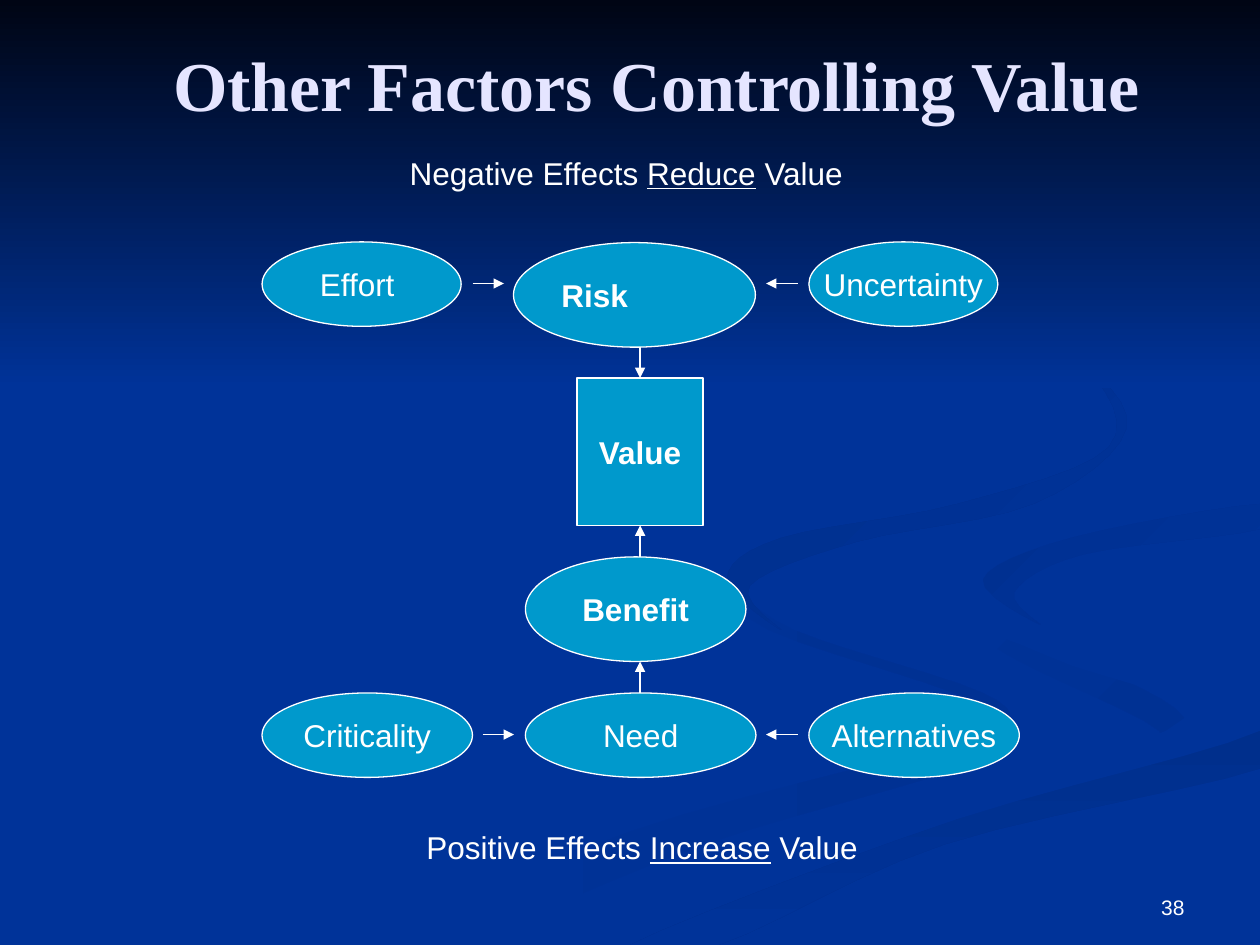
import pptx
import pptx.dml.color
import pptx.enum.shapes
import pptx.enum.text
import pptx.oxml
import pptx.util

Inches = pptx.util.Inches
Pt = pptx.util.Pt
MSO_SHAPE = pptx.enum.shapes.MSO_SHAPE
ALIGN = pptx.enum.text.PP_ALIGN
ANCHOR = pptx.enum.text.MSO_ANCHOR

COLORS = {
    "blue": "003399",
    "night": "000514",
    "ribbon": "003193",
    "ribbon_dark": "002F8C",
    "ribbon_mid": "003091",
    "node": "0099CC",
    "white": "FFFFFF",
    "title": "E5E5FF",
}

RIBBONS = [
    (("blue", "ribbon", 0), [
        (7.8, 5.5), (6.3, 5), (5.75, 4.6), (6.1, 5), (7.8, 5.6), (7.5, 5.9),
        (5, 6.6), (3, 7.5), (3.6, 7.5), (5.6, 6.7), (7.6, 6.1), (8, 5.8)]),
    (("blue", "ribbon", 45), [
        (9.4, 5.7), (8.5, 5.2), (7.24, 4.64), (8, 5.2), (9.2, 5.8), (8.94, 6.05)]),
    (("ribbon_dark", "blue", 90), [
        (5, 7.5), (5.7, 7.5), (7.5, 6.7), (10, 6.1), (10, 5.8), (7.6, 6.5)]),
    (("blue", "blue", 0), [
        (7.25, 4.6), (8.3, 5.2), (9.4, 5.7), (7.4, 6.4), (4.8, 7.5), (7.6, 6.5),
        (10, 5.8), (10, 5.4), (7.8, 4.6), (10, 4), (10, 3.9)]),
    (("ribbon_mid", "blue", 45), [
        (7.8, 4.6), (8.26, 4.96), (8.05, 4.7), (8.6, 4.4), (10, 4.2), (10, 4),
        (8.5, 4.27)]),
    (("ribbon_dark", "blue", 45), [
        (6.8, 4.3), (8.2, 4), (8.94, 3.4), (8.5, 2.8), (7.62, 2.33), (8.6, 2.9),
        (8.8, 3.55), (7.6, 4), (6.2, 4.27), (5.77, 4.6), (6.2, 5), (5.95, 4.65)]),
]


def rgb(name):
    """Return the named palette colour."""
    return pptx.dml.color.RGBColor.from_string(COLORS[name])


def smooth_outline(corners, steps=6):
    """Return a closed smooth curve through the corners."""
    def blend(before, start, end, after, t):
        return start + t / 2 * (
            end - before
            + t * (2 * before - 5 * start + 4 * end - after)
            + t * t * (3 * (start - end) + after - before))

    count = len(corners)
    curve = []
    for index in range(count):
        near = [corners[(index + shift) % count] for shift in (-1, 0, 1, 2)]
        for step in range(steps):
            curve.append([blend(*axis, step / steps) for axis in zip(*near)])
    return curve


def style_run(run, size, color="white", font="Arial", bold=False, underline=False):
    """Format one run of text."""
    run.font.name, run.font.size = font, Pt(size)
    run.font.bold, run.font.underline = bold, underline
    run.font.color.rgb = rgb(color)


def paint_backdrop(part, start, end, angle):
    """Give a backdrop part its gradient, with no outline or shadow."""
    part.shadow.inherit = False
    part.line.fill.background()
    part.fill.gradient()
    part.fill.gradient_angle = (360 - angle) % 360
    for stop, color in zip(part.fill.gradient_stops, (start, end)):
        stop.color.rgb = rgb(color)


def add_backdrop(slide, left, top, width, height, night_height):
    """Draw the ribbons and the night sky over the blue background."""
    slide.background.fill.solid()
    slide.background.fill.fore_color.rgb = rgb("blue")
    for gradient, corners in RIBBONS:
        points = [(left + min(Inches(x), width), top + min(Inches(y), height))
                  for x, y in smooth_outline(corners)]
        builder = slide.shapes.build_freeform(*points[0])
        builder.add_line_segments(points[1:], close=True)
        paint_backdrop(builder.convert_to_shape(), *gradient)
    sky = slide.shapes.add_shape(MSO_SHAPE.RECTANGLE, left, top, width, night_height)
    paint_backdrop(sky, "night", "blue", 90)


def add_title(slide, left, top, width, height):
    """Place the title placeholder in front of the backdrop."""
    title = slide.shapes.title
    title.left, title.top, title.width, title.height = left, top, width, height
    frame = title.text_frame
    frame.text = "Other Factors Controlling Value"
    frame.margin_left = Inches(0.52)
    frame.vertical_anchor = ANCHOR.MIDDLE
    frame.paragraphs[0].alignment = ALIGN.CENTER
    style_run(frame.paragraphs[0].runs[0], 40, "title", "Times New Roman", bold=True)
    slide.shapes._spTree.append(title._element)


def add_caption(slide, left, top, width, height, words, size=18, align=ALIGN.CENTER,
                anchor=ANCHOR.TOP):
    """Write one line of text, underlining every second piece."""
    frame = slide.shapes.add_textbox(left, top, width, height).text_frame
    frame.word_wrap = True
    frame.vertical_anchor = anchor
    line = frame.paragraphs[0]
    line.alignment = align
    for index, piece in enumerate(words):
        run = line.add_run()
        run.text = piece
        style_run(run, size, underline=index % 2 == 1)


def add_factor(slide, left, top, width, height, label, bold=False, kind=MSO_SHAPE.OVAL):
    """Draw one labelled factor and return it."""
    factor = slide.shapes.add_shape(kind, left, top, width, height)
    factor.shadow.inherit = False
    factor.fill.solid()
    factor.fill.fore_color.rgb = rgb("node")
    factor.line.color.rgb = rgb("white")
    factor.line.width = Pt(0.75)
    frame = factor.text_frame
    frame.text = label
    frame.word_wrap = False
    frame.vertical_anchor = ANCHOR.MIDDLE
    frame.paragraphs[0].alignment = ALIGN.CENTER
    style_run(frame.paragraphs[0].runs[0], 18, bold=bold)
    return factor


def add_arrow(slide, x1, y1, x2, y2):
    """Draw a thin white arrow and return it."""
    arrow = slide.shapes.add_connector(
        pptx.enum.shapes.MSO_CONNECTOR.STRAIGHT, x1, y1, x2, y2)
    arrow.line.color.rgb = rgb("white")
    arrow.line.width = Pt(0.75)
    namespace = pptx.oxml.ns.nsdecls("a")
    arrow.line._get_or_add_ln().append(
        pptx.oxml.parse_xml(f'<a:tailEnd {namespace} type="triangle"/>'))
    arrow._element.spPr.append(pptx.oxml.parse_xml(f"<a:effectLst {namespace}/>"))
    return arrow


def add_value_diagram(slide, left, top):
    """Draw the factors and the arrows that lead to Value."""
    def place(x, y, width, height, label, **options):
        return add_factor(slide, left + Inches(x), top + Inches(y),
                          Inches(width), Inches(height), label, **options)

    def point(x1, y1, x2, y2):
        return add_arrow(slide, left + Inches(x1), top + Inches(y1),
                         left + Inches(x2), top + Inches(y2))

    place(0, 0, 1.58, 0.67, "Effort ")
    risk = place(2.54, -0.54, 0.83, 1.92, "Risk", bold=True)
    risk.rotation = 270
    risk.text_frame._txBody.bodyPr.set("vert", "eaVert")
    place(4.34, 0, 1.5, 0.67, "Uncertainty")
    value = place(2.5, 1.08, 1, 1.17, "Value", bold=True, kind=MSO_SHAPE.RECTANGLE)
    place(2.09, 2.5, 1.75, 0.83, "Benefit", bold=True)
    place(0, 3.58, 1.67, 0.67, "Criticality")
    place(2.09, 3.58, 1.83, 0.67, "Need")
    place(4.34, 3.58, 1.67, 0.67, "Alternatives")

    for y, start in ((0.33, 1.67), (3.91, 1.75)):
        point(start, y, start + 0.25, y)
        point(4.25, y, 4, y)
    point(3, 0.83, 3, 1.08).end_connect(value, 0)
    point(3, 2.5, 3, 2.25).end_connect(value, 2)
    point(3, 3.58, 3, 3.33)


def main():
    """Build the slide and save it."""
    deck = pptx.Presentation()
    deck.slide_width, deck.slide_height = Inches(10), Inches(7.5)
    slide = deck.slides.add_slide(deck.slide_layouts[5])
    add_backdrop(slide, 0, 0, deck.slide_width, deck.slide_height, Inches(3.08))
    add_title(slide, Inches(0.5), Inches(0.25), Inches(9), Inches(0.83))
    add_value_diagram(slide, Inches(2.08), Inches(1.92))
    add_caption(slide, Inches(2.92), Inches(1.17), Inches(4.17), Inches(0.4),
                ["Negative Effects ", "Reduce", " Value "])
    add_caption(slide, Inches(3.17), Inches(6.52), Inches(3.92), Inches(0.4),
                ["Positive Effects ", "Increase", " Value "])
    add_caption(slide, Inches(7.17), Inches(6.83), Inches(2.33), Inches(0.52),
                ["38"], 12, ALIGN.RIGHT, ANCHOR.BOTTOM)
    deck.save("out.pptx")


if __name__ == "__main__":
    main()
